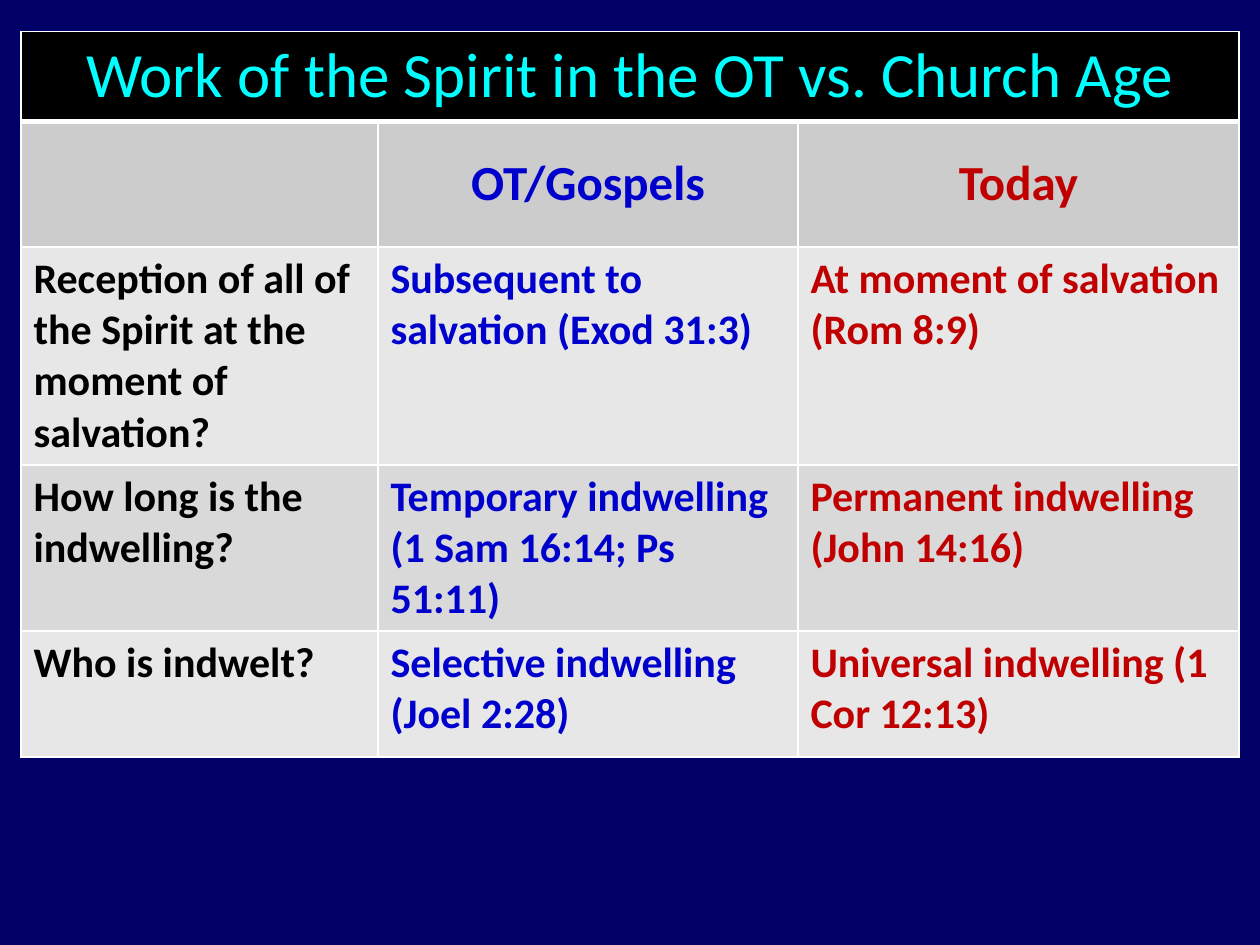
"""Build a slide with a table comparing the Spirit's work in the OT and today."""
from lxml.etree import SubElement
from pptx import Presentation
from pptx.dml.color import RGBColor
from pptx.enum.text import MSO_ANCHOR, PP_ALIGN
from pptx.oxml.ns import qn
from pptx.util import Pt

NAVY = RGBColor(0x00, 0x00, 0x66)
BLACK = RGBColor(0x00, 0x00, 0x00)
WHITE = RGBColor(0xFF, 0xFF, 0xFF)
CYAN = RGBColor(0x00, 0xFF, 0xFF)
BLUE = RGBColor(0x00, 0x00, 0xCC)
RED = RGBColor(0xC0, 0x00, 0x00)
HEADER_GRAY = RGBColor(0xCC, 0xCC, 0xCC)
LIGHT_GRAY = RGBColor(0xE7, 0xE7, 0xE7)
MID_GRAY = RGBColor(0xD9, 0xD9, 0xD9)

TITLE = "Work of the Spirit in the OT vs. Church Age"
HEADER = ("", "OT/Gospels", "Today")
QUESTIONS = [
    ("Reception of all of the Spirit at the moment of salvation?",
     "Subsequent to salvation (Exod 31:3)",
     "At moment of salvation (Rom 8:9)"),
    ("How long is the indwelling?",
     "Temporary indwelling (1 Sam 16:14; Ps 51:11)",
     "Permanent indwelling (John 14:16)"),
    ("Who is indwelt?",
     "Selective indwelling (Joel 2:28)",
     "Universal indwelling (1 Cor 12:13)"),
]
COLUMN_COLORS = (BLACK, BLUE, RED)
COLUMN_WIDTHS = (204, 240, 252)
ROW_HEIGHTS = (50.4, 72, 72, 72, 72)
LEFT, TOP = 12, 18


def add_borders(cell, top, bottom):
    tc_pr = cell._tc.get_or_add_tcPr()
    for side, width in (("L", 1), ("R", 1), ("T", top), ("B", bottom)):
        ln = SubElement(tc_pr, qn(f"a:ln{side}"), w=str(Pt(width)))
        fill = SubElement(ln, qn("a:solidFill"))
        SubElement(fill, qn("a:srgbClr"), val=str(WHITE))


def paint(cell, color, top=1, bottom=1):
    add_borders(cell, top, bottom)
    cell.fill.solid()
    cell.fill.fore_color.rgb = color


def write(cell, text, size, color, bold=True, centered=False):
    if not text:
        return
    p = cell.text_frame.paragraphs[0]
    if centered:
        p.alignment = PP_ALIGN.CENTER
        cell.vertical_anchor = MSO_ANCHOR.MIDDLE
    r = p.add_run()
    r.text = text
    r.font.name = "Calibri"
    r.font.size = Pt(size)
    r.font.bold = bold
    r.font.color.rgb = color


def main():
    prs = Presentation()
    prs.slide_width, prs.slide_height = Pt(720), Pt(540)
    s = prs.slides.add_slide(prs.slide_layouts[6])
    s.background.fill.solid()
    s.background.fill.fore_color.rgb = NAVY

    table = s.shapes.add_table(
        len(ROW_HEIGHTS), len(COLUMN_WIDTHS), Pt(LEFT), Pt(TOP),
        Pt(sum(COLUMN_WIDTHS)), Pt(sum(ROW_HEIGHTS))).table
    for column, width in zip(table.columns, COLUMN_WIDTHS):
        column.width = Pt(width)
    for row, height in zip(table.rows, ROW_HEIGHTS):
        row.height = Pt(height)

    for col, color in enumerate(COLUMN_COLORS):
        paint(table.cell(0, col), BLACK, bottom=3)
        paint(table.cell(1, col), HEADER_GRAY, top=3)
        write(table.cell(1, col), HEADER[col], 28, color, centered=True)
        for i, answers in enumerate(QUESTIONS):
            cell = table.cell(i + 2, col)
            paint(cell, MID_GRAY if i % 2 else LIGHT_GRAY)
            write(cell, answers[col], 24, color)

    title = table.cell(0, 0)
    title.merge(table.cell(0, len(COLUMN_WIDTHS) - 1))
    write(title, TITLE, 36, CYAN, bold=False, centered=True)
    prs.save("out.pptx")


if __name__ == "__main__":
    main()
